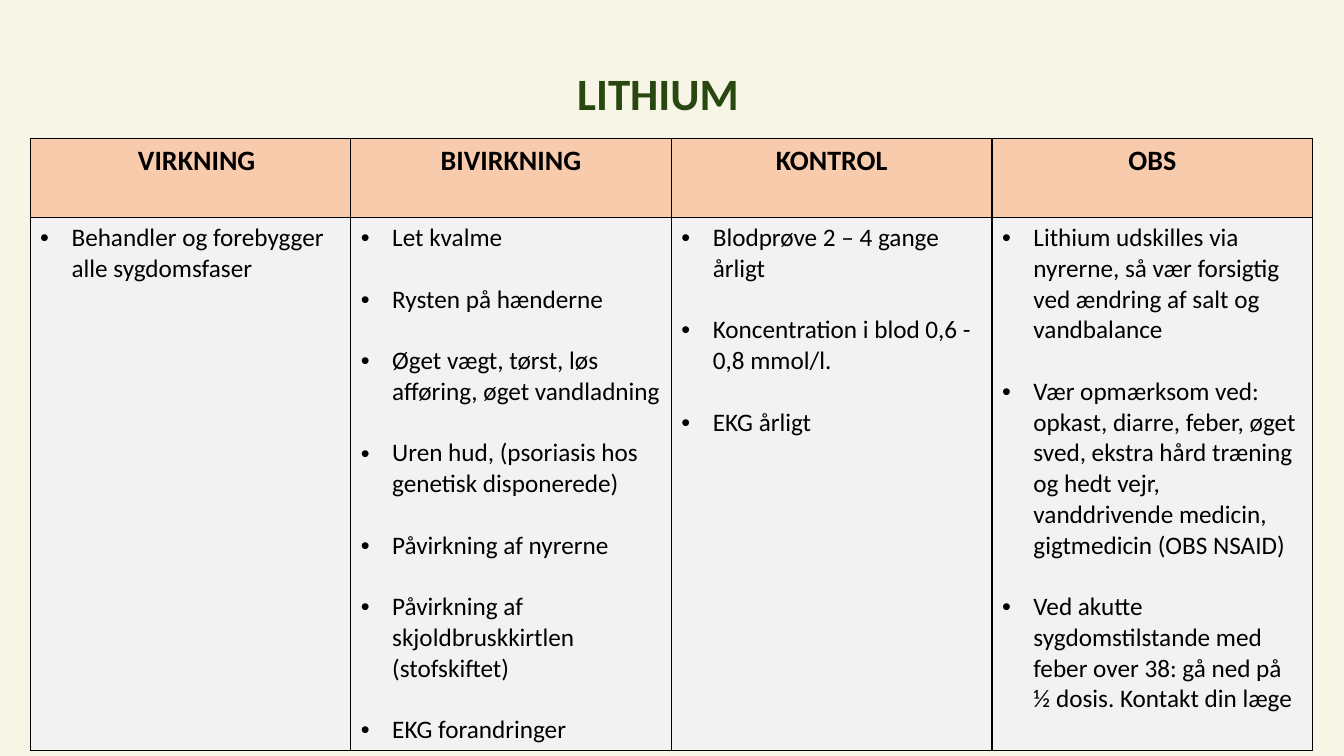
"""Build a one-page overview table about lithium treatment."""
from lxml import etree
from pptx import Presentation
from pptx import util as u
from pptx.dml import color
from pptx.enum import text
from pptx.oxml import ns

FONT = "Calibri"
BLACK = "000000"
INDENT = u.Cm(0.79)
COLUMNS = {
    "VIRKNING": ["Behandler og forebygger alle sygdomsfaser"],
    "BIVIRKNING": [
        "Let kvalme",
        "Rysten på hænderne",
        "Øget vægt, tørst, løs afføring, øget vandladning",
        "Uren hud, (psoriasis hos genetisk disponerede)",
        "Påvirkning af nyrerne",
        "Påvirkning af skjoldbruskkirtlen (stofskiftet)",
        "EKG forandringer",
    ],
    "KONTROL": [
        "Blodprøve 2 – 4 gange årligt",
        "Koncentration i blod 0,6 - 0,8 mmol/l.",
        "EKG årligt",
    ],
    "OBS": [
        "Lithium udskilles via nyrerne, så vær forsigtig ved ændring af salt og vandbalance",
        "Vær opmærksom ved: opkast, diarre, feber, øget sved, ekstra hård træning "
        "og hedt vejr, vanddrivende medicin, gigtmedicin (OBS NSAID)",
        "Ved akutte sygdomstilstande med feber over 38: gå ned på ½ dosis. "
        "Kontakt din læge",
    ],
}


def paint(fill, value):
    """Give a fill a solid colour from a hex string."""
    fill.solid()
    fill.fore_color.rgb = color.RGBColor.from_string(value)


def add_span(para, words, size, value=BLACK, bold=False):
    """Add one formatted run to a paragraph."""
    span = para.add_run()
    span.text = words
    span.font.name = FONT
    span.font.size = u.Pt(size)
    span.font.bold = bold
    paint(span.font.fill, value)


def add_title(page, words):
    """Add the centred heading above the table."""
    box = page.shapes.add_textbox(u.Cm(1.98), u.Cm(1.35), u.Cm(29.21), u.Cm(2.13))
    frame = box.text_frame
    frame.word_wrap = True
    frame.vertical_anchor = text.MSO_ANCHOR.MIDDLE
    para = frame.paragraphs[0]
    para.alignment = text.PP_ALIGN.CENTER
    para.line_spacing = 0.9
    add_span(para, words, 32, "294711", True)


def style_cell(cell, value):
    """Fill a cell and draw thin black borders around it."""
    paint(cell.fill, value)
    properties = cell._tc.get_or_add_tcPr()
    for place, side in enumerate(("lnL", "lnR", "lnT", "lnB")):
        line = etree.Element(ns.qn(f"a:{side}"), w=str(u.Pt(1)))
        solid = etree.SubElement(line, ns.qn("a:solidFill"))
        etree.SubElement(solid, ns.qn("a:srgbClr"), val=BLACK)
        properties.insert(place, line)


def fill_header(cell, words):
    """Write a centred column heading."""
    style_cell(cell, "F8CBAD")
    para = cell.text_frame.paragraphs[0]
    para.alignment = text.PP_ALIGN.CENTER
    add_span(para, words, 20, bold=True)


def fill_bullets(cell, items):
    """Write bulleted items, spaced one line apart."""
    style_cell(cell, "F2F2F2")
    frame = cell.text_frame
    for number, item in enumerate(items):
        para = frame.add_paragraph() if number else frame.paragraphs[0]
        properties = para._p.get_or_add_pPr()
        properties.set("marL", str(INDENT))
        properties.set("indent", str(-INDENT))
        etree.SubElement(properties, ns.qn("a:buFont"), typeface="Arial")
        etree.SubElement(properties, ns.qn("a:buChar"), char="•")
        if number:
            para.space_before = u.Pt(22)
        add_span(para, item, 18)


def add_overview(page):
    """Add the table with one column for each topic."""
    width, heights = u.Cm(8.08), (u.Cm(1.98), u.Cm(13.43))
    table = page.shapes.add_table(
        2, len(COLUMNS), u.Cm(0.76), u.Cm(3.5), width * len(COLUMNS), sum(heights)
    ).table
    for row, height in zip(table.rows, heights):
        row.height = height
    for number, (heading, items) in enumerate(COLUMNS.items()):
        table.columns[number].width = width
        fill_header(table.cell(0, number), heading)
        fill_bullets(table.cell(1, number), items)
    table.cell(0, 0).margin_left = u.Cm(0.57)


def main():
    """Create the deck and save it."""
    deck = Presentation()
    deck.slide_width, deck.slide_height = u.Cm(33.87), u.Cm(19.05)
    page = deck.slides.add_slide(deck.slide_layouts[6])
    paint(page.background.fill, "F7F6E6")
    add_title(page, "LITHIUM")
    add_overview(page)
    deck.save("out.pptx")


if __name__ == "__main__":
    main()
